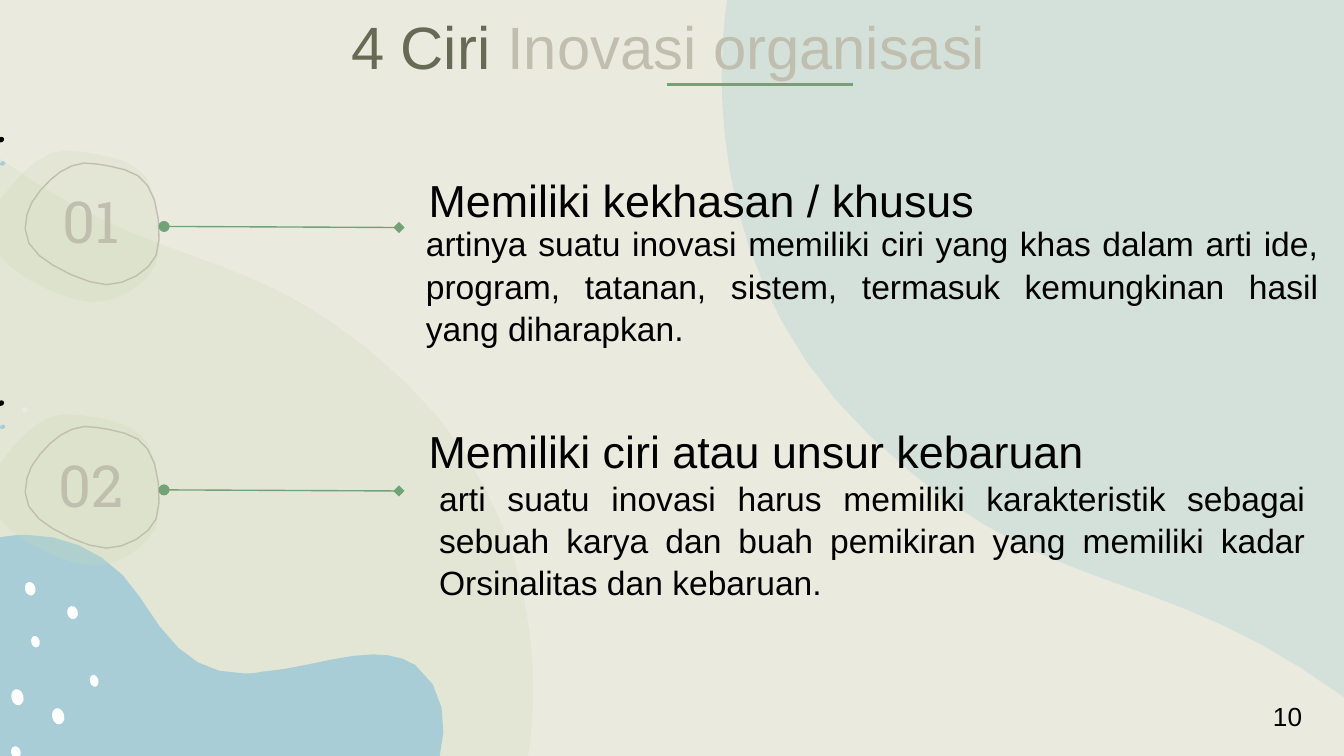
import math

import lxml.etree
import pptx
import pptx.dml.color
import pptx.enum.shapes
import pptx.enum.text
import pptx.oxml.ns
import pptx.util

Cm = pptx.util.Cm
Pt = pptx.util.Pt
RGB = pptx.dml.color.RGBColor.from_string
ALIGN = pptx.enum.text.PP_ALIGN
ANCHOR = pptx.enum.text.MSO_ANCHOR
qn = pptx.oxml.ns.qn

COLORS = {"cream": "EAEBDE", "blue": "A8CDD7", "sage": "CDD7B6", "green": "72A376",
          "stone": "C0BEAF", "olive": "676A55", "black": "000000", "white": "FFFFFF"}

# Outlines in cm: a start point, then lines (x, y) and Bezier curves (six numbers)
TEAL_WAVE = [(13.64, 1.45), (13.64, 3.15, 14.05, 5.97, 16.46, 8.26),
             (19.89, 11.51, 21.69, 10.49, 25.4, 13.18), (25.4, 0), (13.74, 0),
             (13.74, 0, 13.64, 0.56, 13.64, 1.45)]
SAGE_WAVE = [(10.08, 13.03), (10.08, 11.58, 9.7, 9.17, 7.65, 7.21),
             (4.72, 4.45, 3.18, 5.31, 0, 3), (0, 14.29), (9.98, 14.29),
             (9.98, 14.29, 10.08, 13.79, 10.08, 13.03)]
BLUE_WAVE = [(8.31, 14.3), (8.46, 13.74, 8.41, 12.98, 7.85, 12.57),
             (7.62, 12.42, 7.34, 12.37, 7.06, 12.37), (6.43, 12.37, 5.66, 12.65, 4.93, 12.7),
             (4.83, 12.73, 4.72, 12.73, 4.62, 12.73), (3.76, 12.73, 3.28, 12.32, 2.64, 11.28),
             (2.18, 10.54, 1.35, 10.11, 0.51, 10.11), (0.3, 10.11, 0.08, 10.13, -0.13, 10.19),
             (-0.13, 14.3)]
BADGE = [(0.69, 3.05), (0.41, 3.25, -0.03, 3.73, -0.13, 4.06),
         (-0.2, 4.39, -0.13, 4.75, 0.18, 5.03), (0.48, 5.31, 1.32, 5.72, 1.78, 5.72),
         (2.24, 5.72, 2.77, 5.38, 2.95, 5), (3.1, 4.6, 3, 3.71, 2.77, 3.35),
         (2.51, 3, 1.91, 2.92, 1.55, 2.87), (1.19, 2.82, 0.97, 2.84, 0.69, 3.05)]
RING = [(1.14, 3.25), (0.91, 3.4, 0.56, 3.78, 0.51, 4.06),
        (0.43, 4.32, 0.48, 4.62, 0.74, 4.83), (0.99, 5.05, 1.65, 5.38, 2.01, 5.38),
        (2.39, 5.38, 2.82, 5.13, 2.95, 4.83), (3.07, 4.5, 3, 3.78, 2.79, 3.51),
        (2.62, 3.2, 2.11, 3.15, 1.83, 3.1), (1.57, 3.05, 1.37, 3.1, 1.14, 3.25)]

presentation = pptx.Presentation()
presentation.slide_width, presentation.slide_height = Cm(25.4), Cm(14.29)
slide = presentation.slides.add_slide(presentation.slide_layouts[5])
slide.background.fill.solid()
slide.background.fill.fore_color.rgb = RGB(COLORS["cream"])


def add_outline(outline, fill=None, opacity=100, line=None, down=0):
    """Draw an outline, dividing each curve into steps that suit its length."""
    points = [outline[0]]
    for segment in outline[1:]:
        if len(segment) == 2:
            points.append(segment)
            continue
        nodes = [points[-1], segment[:2], segment[2:4], segment[4:]]
        steps = 3 + int(math.dist(nodes[0], nodes[3]))
        for step in range(1, steps + 1):
            t = step / steps
            weights = ((1 - t) ** 3, 3 * t * (1 - t) ** 2, 3 * t ** 2 * (1 - t), t ** 3)
            points.append(tuple(sum(w * node[axis] for w, node in zip(weights, nodes))
                                for axis in (0, 1)))
    places = [(Cm(x), Cm(y + down)) for x, y in points]
    builder = slide.shapes.build_freeform(*places[0])
    builder.add_line_segments(places[1:], close=True)
    shape = builder.convert_to_shape()
    shape.shadow.inherit = False
    if fill:
        shape.fill.solid()
        shape.fill.fore_color.rgb = RGB(COLORS[fill])
        if opacity < 100:
            color = shape.element.spPr.find(".//" + qn("a:srgbClr"))
            lxml.etree.SubElement(color, qn("a:alpha")).set("val", str(opacity * 1000))
    else:
        shape.fill.background()
    if line:
        shape.line.color.rgb = RGB(COLORS[line])
        shape.line.width = Pt(0.75)
    else:
        shape.line.fill.background()


def set_text(shape, runs, size, align=ALIGN.LEFT, font="Arial", spacing=1,
             anchor=ANCHOR.MIDDLE, insets=(0.25, 0.25, 0.25, 0.25)):
    """Fill a shape with one paragraph of (text, color) runs."""
    left, top, right, bottom = map(Cm, insets)
    frame_format = {"word_wrap": True, "auto_size": pptx.enum.text.MSO_AUTO_SIZE.NONE,
                    "vertical_anchor": anchor, "margin_left": left, "margin_top": top,
                    "margin_right": right, "margin_bottom": bottom}
    for name, value in frame_format.items():
        setattr(shape.text_frame, name, value)
    paragraph = shape.text_frame.paragraphs[0]
    paragraph.alignment, paragraph.line_spacing = align, spacing
    for text, color in runs:
        run = paragraph.add_run()
        run.text = text
        for name, value in {"name": font, "size": Pt(size), "bold": False}.items():
            setattr(run.font, name, value)
        run.font.color.rgb = RGB(COLORS[color])


# Background waves
add_outline(TEAL_WAVE, "blue", 32)
add_outline(SAGE_WAVE, "sage", 24)
add_outline(BLUE_WAVE, "blue")

# Dots: center x, center y, length, thickness, rotation, color
dots = [(x, y, length, thickness, 76.4, "white") for x, y, length, thickness in [
    (0.57, 11.13, 0.26, 0.2), (1.37, 11.58, 0.25, 0.2), (1.78, 12.87, 0.23, 0.16),
    (1.1, 13.54, 0.31, 0.23), (0.67, 12.13, 0.22, 0.16), (0.33, 13.18, 0.31, 0.23),
    (0.3, 14.22, 0.23, 0.18)]]
ROW_STEP = 4.98
for down in (0, ROW_STEP):
    dots += [(0.47, 2.77 + down, 0.12, 0.1, 331.2, "cream"),
             (0.02, 2.64 + down, 0.12, 0.1, 331.2, "black"),
             (0.05, 3.09 + down, 0.1, 0.08, 331.2, "blue")]
for x, y, length, thickness, rotation, color in dots:
    dot = slide.shapes.add_shape(pptx.enum.shapes.MSO_SHAPE.OVAL, Cm(x - length / 2),
                                 Cm(y - thickness / 2), Cm(length), Cm(thickness))
    dot.rotation = rotation
    dot.shadow.inherit = False
    dot.fill.solid()
    dot.fill.fore_color.rgb = RGB(COLORS[color])
    dot.line.fill.background()

# Title, brought in front of the waves
title = slide.shapes.title
title.element.getparent().append(title.element)
title.left, title.top, title.width, title.height = Cm(1.93), Cm(0.41), Cm(21.41), Cm(0.89)
set_text(title, [("4 Ciri ", "olive"), ("Inovasi organisasi", "stone")], 32, ALIGN.CENTER)

# Badges, headings and descriptions
items = [
    {"number": "01", "heading": "Memiliki kekhasan / khusus", "heading_top": 3.3,
     "heading_width": 11.1, "body_top": 4.29, "body_height": 2.16,
     "body": "artinya suatu inovasi memiliki ciri yang khas dalam arti ide, program, "
             "tatanan, sistem, termasuk kemungkinan hasil yang diharapkan. ",
     "anchor": ANCHOR.MIDDLE, "insets": (0, 0.03, 0, 0)},
    {"number": "02", "heading": "Memiliki ciri atau unsur kebaruan", "heading_top": 8.05,
     "heading_width": 13.23, "body_top": 8.86, "body_height": 2.57,
     "body": "arti suatu inovasi harus memiliki karakteristik sebagai sebuah karya dan "
             "buah pemikiran yang memiliki kadar Orsinalitas dan kebaruan.",
     "anchor": ANCHOR.TOP, "insets": (0.25, 0.13, 0.25, 0.13)},
]
lines = [(12.6, 1.6, 16.13, 1.6, 1.5, {})]
for row, item in enumerate(items):
    down = row * ROW_STEP
    add_outline(BADGE, "sage", 24, down=down)
    add_outline(RING, line="stone", down=down)
    lines.append((7.54, 4.3 + down, 3.1, 4.28 + down, 0.75,
                  {"a:headEnd": "diamond", "a:tailEnd": "oval"}))
    number = slide.shapes.add_textbox(Cm(0.71), Cm(3.68 + down), Cm(2.03), Cm(0.99))
    set_text(number, [(item["number"], "stone")], 31, ALIGN.CENTER, "Roboto Slab")
    heading = slide.shapes.add_textbox(Cm(7.85), Cm(item["heading_top"]),
                                       Cm(item["heading_width"]), Cm(0.94))
    set_text(heading, [(item["heading"], "black")], 24)
    body = slide.shapes.add_textbox(Cm(8.05), Cm(item["body_top"]),
                                    Cm(16.87), Cm(item["body_height"]))
    set_text(body, [(item["body"], "black")], 18, ALIGN.JUSTIFY, spacing=1.05,
             anchor=item["anchor"], insets=item["insets"])

# Title underline and badge pointers
for x1, y1, x2, y2, width, ends in lines:
    connector = slide.shapes.add_connector(pptx.enum.shapes.MSO_CONNECTOR.STRAIGHT,
                                           Cm(x1), Cm(y1), Cm(x2), Cm(y2))
    connector.line.color.rgb = RGB(COLORS["green"])
    connector.line.width = Pt(width)
    properties = connector.element.spPr
    for tag, kind in ends.items():
        lxml.etree.SubElement(properties.find(qn("a:ln")), qn(tag)).set("type", kind)
    lxml.etree.SubElement(properties, qn("a:effectLst"))

# Page number
page_number = slide.shapes.add_textbox(Cm(23.34), Cm(12.98), Cm(1.52), Cm(1.09))
set_text(page_number, [("10", "black")], 14, ALIGN.RIGHT, anchor=ANCHOR.TOP)

presentation.save("out.pptx")
